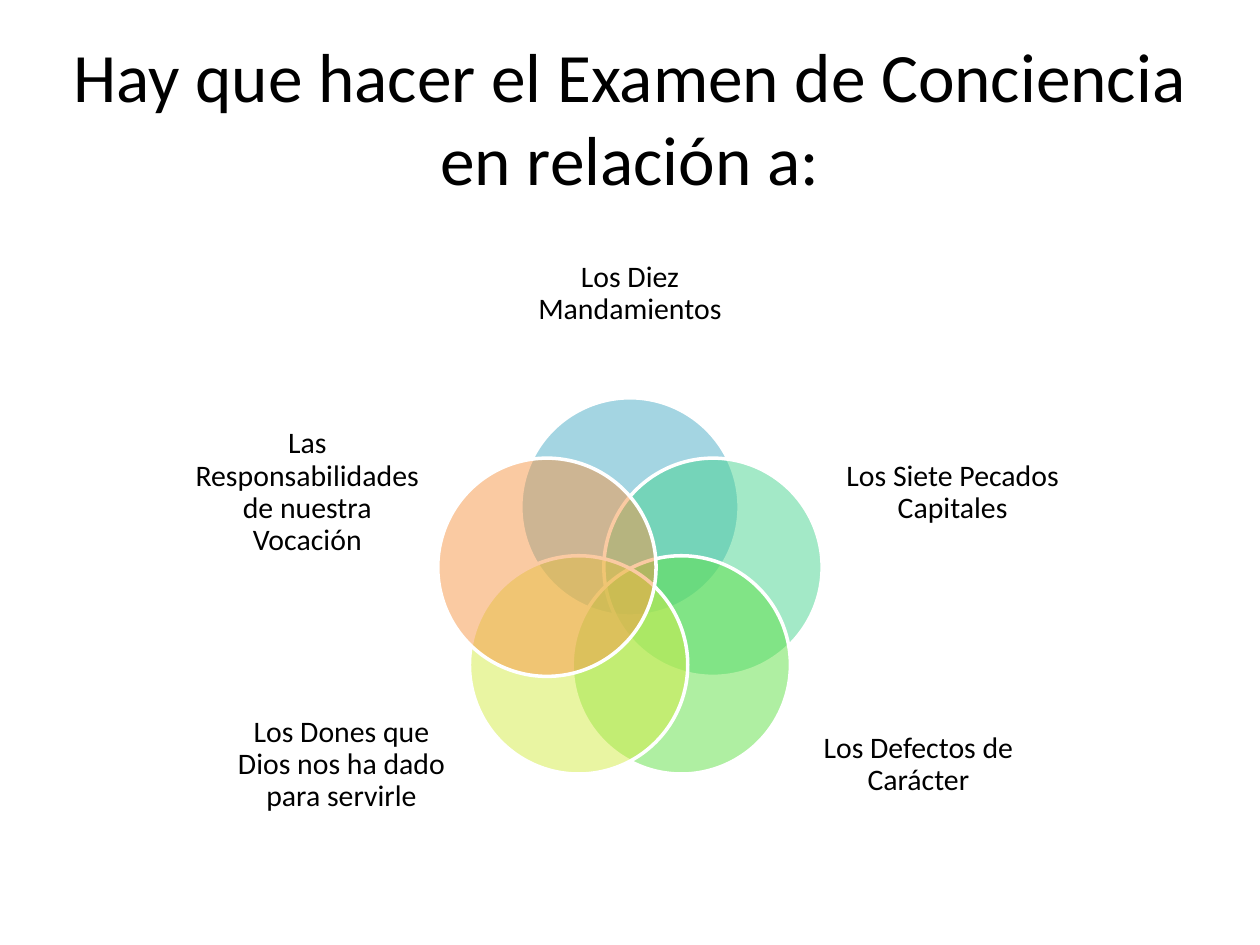
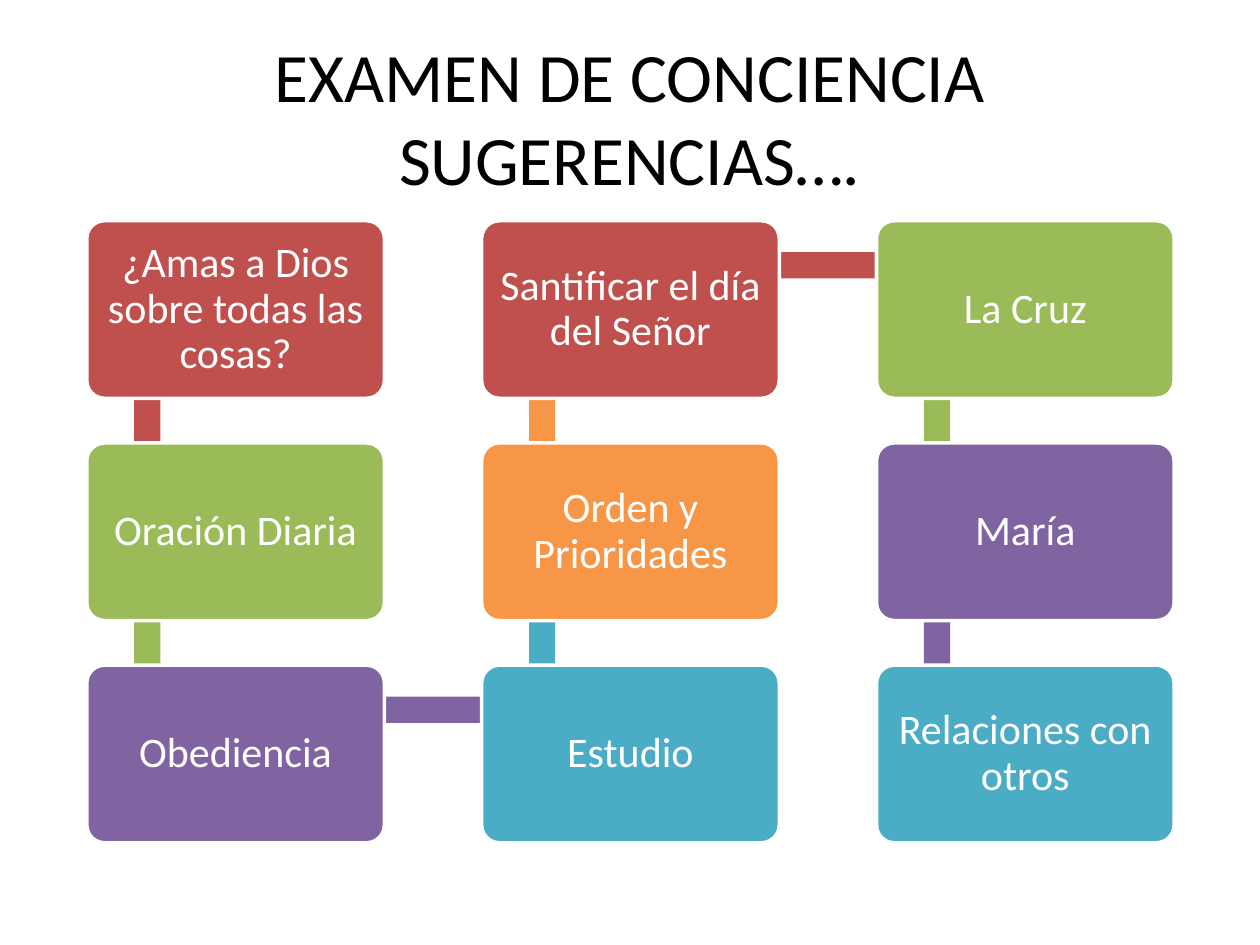
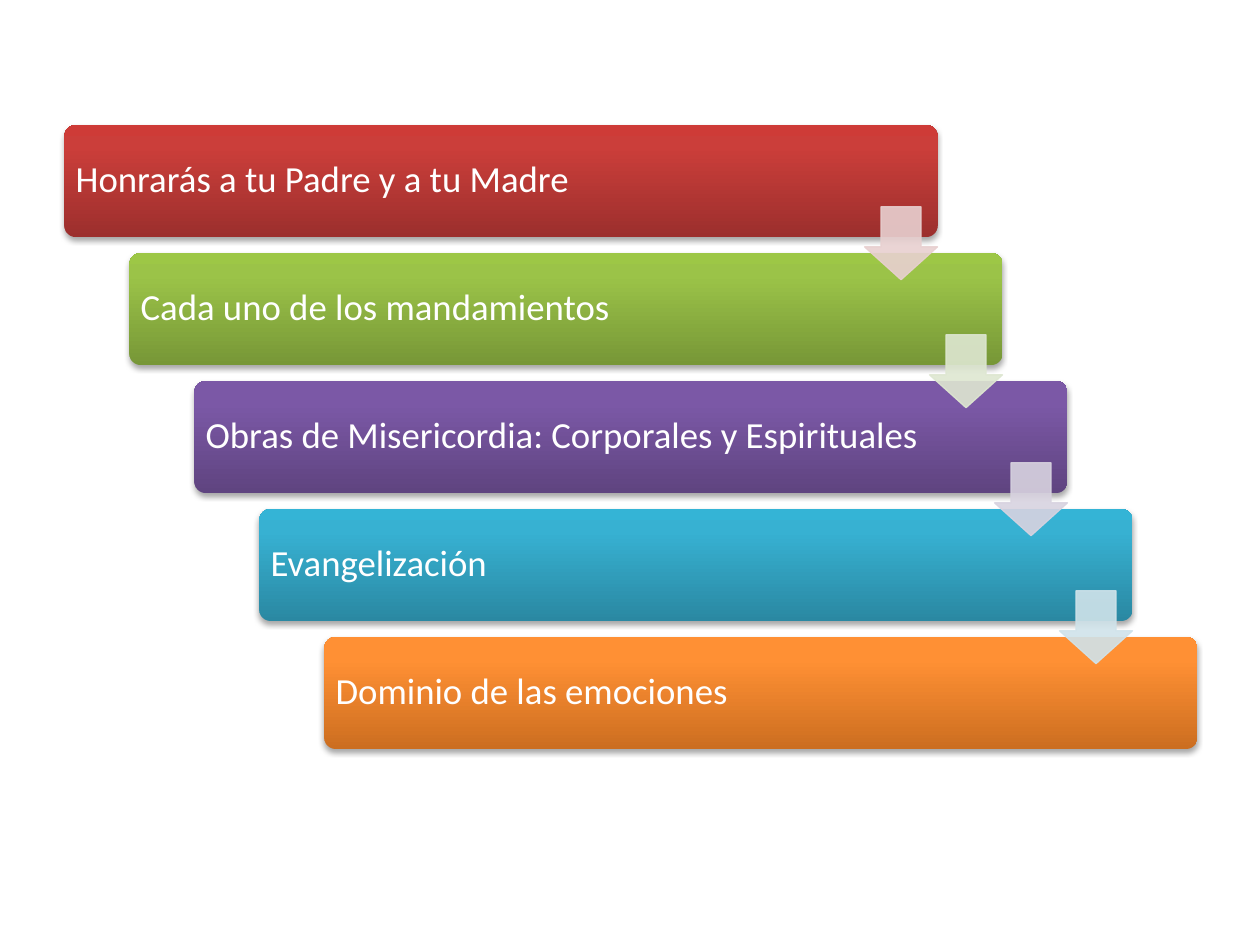
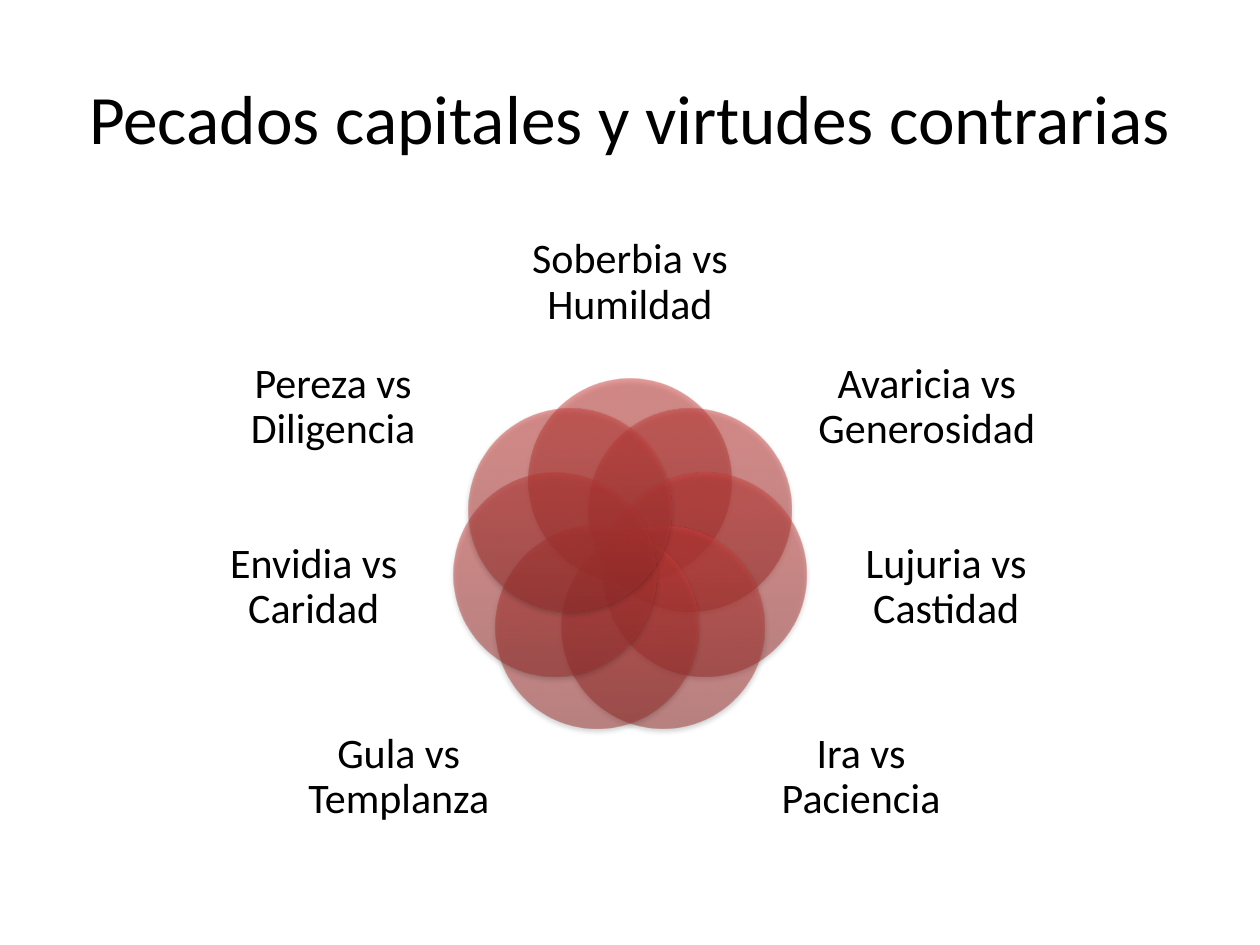
"""Build four slides on the examination of conscience."""

from copy import deepcopy
from dataclasses import dataclass
from math import cos, pi, sin

from lxml.etree import SubElement
from pptx import Presentation
from pptx.dml.color import RGBColor
from pptx.enum.shapes import MSO_SHAPE
from pptx.enum.text import MSO_ANCHOR, PP_ALIGN
from pptx.oxml.ns import qn
from pptx.shapes.autoshape import Shape
from pptx.slide import Slide
from pptx.util import Cm, Pt

Ramp = tuple[str, str, str]


@dataclass(frozen=True)
class Theme:
    font: str = "Calibri"
    black: str = "000000"
    white: str = "FFFFFF"
    red: str = "C0504D"
    green: str = "9BBB59"
    purple: str = "8064A2"
    blue: str = "4BACC6"
    orange: str = "F79646"
    mint: str = "48D491"
    leaf: str = "60E146"
    lime: str = "D5EC46"
    reds: Ramp = ("9C2F2D", "CB3E3A", "CE3B37")
    greens: Ramp = ("779737", "9BC348", "9DC746")
    purples: Ramp = ("5F4480", "7B58A6", "7C57A8")
    blues: Ramp = ("2A88A2", "37B1D2", "34B4D6")
    oranges: Ramp = ("CC6E20", "FF9034", "FF9136")
    tints: tuple[str, ...] = ("E8D0D0", "DEE7D1", "D8D3E0", "D0E3EA")
    title: float = 39.6
    big: float = 24
    step: float = 21
    small: float = 17
    edge: float = 2
    hair: float = 0.75


@dataclass(frozen=True)
class Box:
    left: float
    top: float
    width: float
    height: float

    def mirror(self) -> "Box":
        return Box(WIDTH - self.left - self.width, self.top, self.width, self.height)


@dataclass(frozen=True)
class Petal:
    text: str
    fill: str | Ramp


@dataclass(frozen=True)
class Flower:
    middle: float
    reach: float
    size: float
    type_size: float
    crown: Box
    right: tuple[Box, ...]
    petals: tuple[Petal, ...]


@dataclass(frozen=True)
class Card:
    text: str
    color: str


@dataclass(frozen=True)
class Step:
    text: str
    ramp: Ramp


THEME = Theme()
WIDTH, HEIGHT = 25.4, 19.05
TITLE = Box(1.27, 0.76, 22.86, 3.18)

TOPICS = Flower(
    middle=11.98, reach=1.76, size=4.4, type_size=THEME.small,
    crown=Box(10.15, 4.45, 5.1, 2.95),
    right=(Box(16.92, 8.33, 4.57, 3.2), Box(16.23, 13.82, 4.57, 3.2)),
    petals=(
        Petal("Los Diez Mandamientos", THEME.blue),
        Petal("Los Siete Pecados Capitales", THEME.mint),
        Petal("Los Defectos de Carácter", THEME.leaf),
        Petal("Los Dones que Dios nos ha dado para servirle", THEME.lime),
        Petal("Las Responsabilidades de nuestra Vocación", THEME.orange),
    ),
)

SINS = Flower(
    middle=11.24, reach=1.55, size=4.09, type_size=THEME.big,
    crown=Box(10.35, 4.45, 4.7, 2.51),
    right=(
        Box(16.46, 6.83, 4.45, 2.77),
        Box(16.89, 10.36, 4.37, 2.95),
        Box(15.01, 14.33, 4.7, 2.69),
    ),
    petals=tuple(
        Petal(text, THEME.reds)
        for text in (
            "Soberbia vs Humildad",
            "Avaricia vs Generosidad",
            "Lujuria vs Castidad",
            "Ira vs Paciencia",
            "Gula vs Templanza",
            "Envidia vs Caridad",
            "Pereza vs Diligencia",
        )
    ),
)

CARDS = (
    Card("¿Amas a Dios sobre todas las cosas?", THEME.red),
    Card("Oración Diaria", THEME.green),
    Card("Obediencia", THEME.purple),
    Card("Estudio", THEME.blue),
    Card("Orden y Prioridades", THEME.orange),
    Card("Santificar el día del Señor", THEME.red),
    Card("La Cruz", THEME.green),
    Card("María", THEME.purple),
    Card("Relaciones con otros", THEME.blue),
)

STEPS = (
    Step("Honrarás a tu Padre y a tu Madre", THEME.reds),
    Step("Cada uno de los mandamientos", THEME.greens),
    Step("Obras de Misericordia: Corporales y Espirituales", THEME.purples),
    Step("Evangelización", THEME.blues),
    Step("Dominio de las emociones", THEME.oranges),
)


def place(box: Box) -> tuple[Cm, Cm, Cm, Cm]:
    return Cm(box.left), Cm(box.top), Cm(box.width), Cm(box.height)


def write(shape: Shape, text: str, size: float, color: str, inset: float = 0,
          align: PP_ALIGN = PP_ALIGN.CENTER, spacing: float = 0.9) -> None:
    frame = shape.text_frame
    frame.word_wrap = True
    frame.vertical_anchor = MSO_ANCHOR.MIDDLE
    frame.margin_left = frame.margin_right = Cm(inset)
    frame.margin_top = frame.margin_bottom = Cm(inset)
    line = frame.paragraphs[0]
    line.text = text
    line.alignment = align
    line.line_spacing = spacing
    for run in line.runs:
        run.font.name = THEME.font
        run.font.size = Pt(size)
        run.font.color.rgb = RGBColor.from_string(color)


def add_label(slide: Slide, box: Box, text: str, size: float) -> None:
    write(slide.shapes.add_textbox(*place(box)), text, size, THEME.black)


def add_title(slide: Slide, text: str) -> None:
    shape = slide.shapes.add_textbox(*place(TITLE))
    write(shape, text, THEME.title, THEME.black, inset=0.2, spacing=1.0)


def add_form(slide: Slide, kind: MSO_SHAPE, box: Box) -> Shape:
    shape = slide.shapes.add_shape(kind, *place(box))
    shape.shadow.inherit = False
    shape.line.fill.background()
    return shape


def paint(shape: Shape, color: str) -> None:
    shape.fill.solid()
    shape.fill.fore_color.rgb = RGBColor.from_string(color)


def outline(shape: Shape, color: str, width: float) -> None:
    shape.line.color.rgb = RGBColor.from_string(color)
    shape.line.width = Pt(width)


def fade(shape: Shape, percent: int) -> None:
    for color in shape.element.spPr.iter(qn("a:srgbClr")):
        SubElement(color, qn("a:alpha"), val=str(percent * 1000))


def blend(shape: Shape, ramp: Ramp) -> None:
    shape.fill.gradient()
    shape.fill.gradient_angle = 90
    stops = next(shape.element.spPr.iter(qn("a:gsLst")))
    stops.append(deepcopy(stops[0]))
    for stop, color, spot in zip(shape.fill.gradient_stops, ramp, (0, 0.8, 1)):
        stop.color.rgb = RGBColor.from_string(color)
        stop.position = spot


def shade(shape: Shape) -> None:
    effects = shape.element.spPr.find(qn("a:effectLst"))
    shadow = SubElement(effects, qn("a:outerShdw"), blurRad=str(Pt(3.1)),
                        dist=str(Pt(1.8)), dir="5400000", rotWithShape="0")
    color = SubElement(shadow, qn("a:srgbClr"), val=THEME.black)
    SubElement(color, qn("a:alpha"), val="35000")


def draw_flower(slide: Slide, flower: Flower) -> None:
    left = [box.mirror() for box in reversed(flower.right)]
    labels = [flower.crown, *flower.right, *left]
    for index, (petal, label) in enumerate(zip(flower.petals, labels)):
        angle = 2 * pi * index / len(flower.petals)
        x = WIDTH / 2 + flower.reach * sin(angle) - flower.size / 2
        y = flower.middle - flower.reach * cos(angle) - flower.size / 2
        disc = add_form(slide, MSO_SHAPE.OVAL, Box(x, y, flower.size, flower.size))
        if isinstance(petal.fill, str):
            paint(disc, petal.fill)
            fade(disc, 50)
            outline(disc, THEME.white, THEME.edge)
        else:
            blend(disc, petal.fill)
            fade(disc, 50)
            shade(disc)
        add_label(slide, label, petal.text, flower.type_size)


def card_box(index: int) -> Box:
    column, row = divmod(index, 3)
    if column % 2:
        row = 2 - row
    return Box(1.75 + 7.96 * column, 4.45 + 4.48 * row, 6, 3.58)


def draw_link(slide: Slide, start: Box, end: Box, color: str) -> None:
    across, down = end.left - start.left, end.top - start.top
    length, thick = abs(across) + abs(down), 0.53
    x = (start.left + end.left) / 2 + 1.22
    y = (start.top + end.top) / 2 + 0.9
    box = Box(x - length / 2, y - thick / 2, length, thick)
    link = add_form(slide, MSO_SHAPE.RECTANGLE, box)
    paint(link, color)
    if down:
        link.rotation = 90 if down > 0 else 270


def draw_cards(slide: Slide) -> None:
    for index, card in enumerate(CARDS):
        box = card_box(index)
        if index + 1 < len(CARDS):
            draw_link(slide, box, card_box(index + 1), card.color)
        shape = add_form(slide, MSO_SHAPE.ROUNDED_RECTANGLE, box)
        shape.adjustments[0] = 0.1
        paint(shape, card.color)
        outline(shape, THEME.white, THEME.edge)
        write(shape, card.text, THEME.big, THEME.white, inset=0.15)


def draw_steps(slide: Slide) -> None:
    boxes = [Box(1.3 + 1.31 * i, 2.52 + 2.58 * i, 17.6, 2.26) for i in range(len(STEPS))]
    for step, box in zip(STEPS, boxes):
        bar = add_form(slide, MSO_SHAPE.ROUNDED_RECTANGLE, box)
        bar.adjustments[0] = 0.1
        blend(bar, step.ramp)
        shade(bar)
        write(bar, step.text, THEME.step, THEME.white, inset=0.16, align=PP_ALIGN.LEFT)
    size = 1.47
    for tint, box in zip(THEME.tints, boxes):
        spot = Box(box.left + box.width - size, box.top + 1.65, size, size)
        arrow = add_form(slide, MSO_SHAPE.DOWN_ARROW, spot)
        arrow.adjustments[0] = 0.55
        arrow.adjustments[1] = 0.45
        paint(arrow, tint)
        outline(arrow, tint, THEME.hair)
        fade(arrow, 90)


def main() -> None:
    deck = Presentation()
    deck.slide_width, deck.slide_height = Cm(WIDTH), Cm(HEIGHT)
    topics, cards, steps, sins = (
        deck.slides.add_slide(deck.slide_layouts[6]) for _ in range(4)
    )
    add_title(topics, "Hay que hacer el Examen de Conciencia en relación a:")
    draw_flower(topics, TOPICS)
    add_title(cards, "EXAMEN DE CONCIENCIA\nSUGERENCIAS….")
    draw_cards(cards)
    draw_steps(steps)
    add_title(sins, "Pecados capitales y virtudes contrarias")
    draw_flower(sins, SINS)
    deck.save("out.pptx")


if __name__ == "__main__":
    main()
